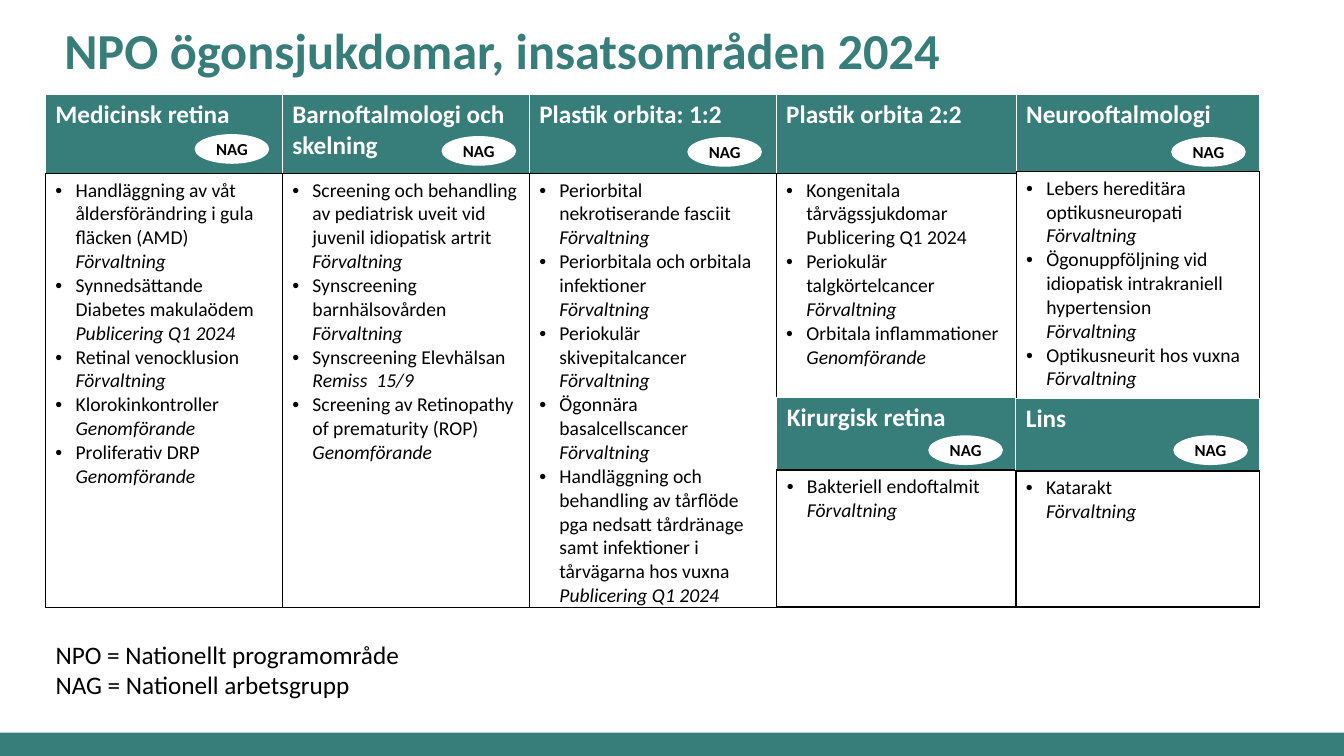
from copy import deepcopy
from dataclasses import dataclass

from lxml import etree
from pptx import Presentation
from pptx.dml.color import RGBColor
from pptx.enum import shapes, text
from pptx.oxml import ns
from pptx.util import Pt

COLORS = {"teal": "377D7A", "white": "FFFFFF", "black": "000000"}
FONT = "Calibri"
BULLET_INDENT = Pt(14.4)


@dataclass
class Item:
    topic: str
    status: str
    italic_status: bool = True


@dataclass
class Area:
    heading: str
    width: float
    items: list[Item]


@dataclass
class AreaTable:
    left: float
    top: float
    header_height: float
    body_height: float
    areas: list[Area]


@dataclass
class Label:
    left: float
    top: float
    width: float
    height: float
    lines: list[str]
    size: float
    color: str = "black"
    bold: bool = False
    wrap: bool = False
    spacing: float | None = None
    anchor: text.MSO_ANCHOR = text.MSO_ANCHOR.TOP


MANAGED, ONGOING, PUBLISHED = "Förvaltning", "Genomförande", "Publicering Q1 2024"

TABLES = [
    AreaTable(32.4, 67.7, 56.2, 309.6, [
        Area("Medicinsk retina", 169.2, [
            Item("Handläggning av våt åldersförändring i gula fläcken (AMD)", MANAGED),
            Item("Synnedsättande Diabetes makulaödem", PUBLISHED),
            Item("Retinal venocklusion", MANAGED),
            Item("Klorokinkontroller", ONGOING),
            Item("Proliferativ DRP", ONGOING)]),
        Area("Barnoftalmologi och skelning", 176.4, [
            Item("Screening och behandling av pediatrisk uveit vid juvenil "
                 "idiopatisk artrit", MANAGED),
            Item("Synscreening barnhälsovården", MANAGED),
            Item("Synscreening Elevhälsan", "Remiss  15/9"),
            Item("Screening av Retinopathy of prematurity (ROP)", ONGOING)]),
        Area("Plastik orbita: 1:2", 176.4, [
            Item("Periorbital nekrotiserande fasciit", MANAGED),
            Item("Periorbitala och orbitala infektioner", MANAGED),
            Item("Periokulär skivepitalcancer", MANAGED),
            Item("Ögonnära basalcellscancer", MANAGED),
            Item("Handläggning och behandling av tårflöde pga nedsatt tårdränage "
                 "samt infektioner i tårvägarna hos vuxna", PUBLISHED)]),
        Area("Plastik orbita 2:2", 171.6, [
            Item("Kongenitala tårvägssjukdomar", PUBLISHED, italic_status=False),
            Item("Periokulär talgkörtelcancer", MANAGED),
            Item("Orbitala inflammationer", ONGOING)]),
    ]),
    AreaTable(725.8, 67.7, 54.8, 162, [
        Area("Neurooftalmologi", 174, [
            Item("Lebers hereditära optikusneuropati", MANAGED),
            Item("Ögonuppföljning vid idiopatisk intrakraniell hypertension", MANAGED),
            Item("Optikusneurit hos vuxna", MANAGED)]),
    ]),
    AreaTable(554.8, 283.7, 52, 97.9, [
        Area("Kirurgisk retina", 170.8, [Item("Bakteriell endoftalmit", MANAGED)]),
    ]),
    AreaTable(725.6, 284.4, 52, 97.2, [
        Area("Lins", 174, [Item("Katarakt", MANAGED)]),
    ]),
]

NAG_SPOTS = [(139, 95.8), (315.4, 97.2), (491, 97.9), (836.6, 97.9),
             (663.1, 311), (838.1, 311)]

LABELS = [
    Label(38.9, 13, 720, 48.2, ["NPO ögonsjukdomar, insatsområden 2024"], 36, "teal",
          bold=True, wrap=True, spacing=0.9, anchor=text.MSO_ANCHOR.BOTTOM),
    Label(32.6, 452.9, 262.8, 51.1,
          ["NPO = Nationellt programområde", "NAG = Nationell arbetsgrupp"], 18),
]


def rgb(name: str) -> RGBColor:
    return RGBColor.from_string(COLORS[name])


def style_runs(paragraph, size: float, color: str, bold: bool) -> None:
    """Format every run, and give line breaks the same properties."""
    for run in paragraph.runs:
        run.font.name, run.font.size, run.font.bold = FONT, Pt(size), bold
        run.font.color.rgb = rgb(color)
    for line_break in paragraph._p.findall(ns.qn("a:br")):
        line_break.append(deepcopy(paragraph.runs[0].font._rPr))


def add_bullet(paragraph) -> None:
    properties = paragraph._p.get_or_add_pPr()
    properties.set("marL", str(BULLET_INDENT))
    properties.set("indent", str(-BULLET_INDENT))
    etree.SubElement(properties, ns.qn("a:buFont")).set("typeface", "Arial")
    etree.SubElement(properties, ns.qn("a:buChar")).set("char", "•")


def set_borders(cell, sides: dict[str, str]) -> None:
    properties = cell._tc.get_or_add_tcPr()
    for side, color in sides.items():
        line = etree.SubElement(properties, ns.qn(f"a:ln{side}"), w=str(Pt(1)))
        fill = etree.SubElement(line, ns.qn("a:solidFill"))
        etree.SubElement(fill, ns.qn("a:srgbClr"), val=COLORS[color])


def fill_header(cell, heading: str) -> None:
    set_borders(cell, {"L": "white", "R": "white", "T": "white", "B": "black"})
    cell.fill.solid()
    cell.fill.fore_color.rgb = rgb("teal")
    cell.text_frame.text = heading
    style_runs(cell.text_frame.paragraphs[0], 18, "white", True)


def fill_body(cell, items: list[Item]) -> None:
    set_borders(cell, dict.fromkeys("LRTB", "black"))
    cell.fill.background()
    cell.margin_bottom = 0
    cell.text_frame.text = "\n".join(f"{item.topic}\v{item.status}" for item in items)
    for paragraph, item in zip(cell.text_frame.paragraphs, items):
        add_bullet(paragraph)
        style_runs(paragraph, 14, "black", False)
        paragraph.runs[-1].font.italic = item.italic_status


def add_area_table(slide, layout: AreaTable) -> None:
    width = sum(area.width for area in layout.areas)
    table = slide.shapes.add_table(
        2, len(layout.areas), Pt(layout.left), Pt(layout.top), Pt(width),
        Pt(layout.header_height + layout.body_height)).table
    table.horz_banding = False
    table.rows[0].height = Pt(layout.header_height)
    table.rows[1].height = Pt(layout.body_height)
    for column, area in enumerate(layout.areas):
        table.columns[column].width = Pt(area.width)
        fill_header(table.cell(0, column), area.heading)
        fill_body(table.cell(1, column), area.items)


def add_plain_shape(slide, kind, left: float, top: float, width: float,
                    height: float, color: str):
    shape = slide.shapes.add_shape(kind, Pt(left), Pt(top), Pt(width), Pt(height))
    shape.shadow.inherit = False
    shape.fill.solid()
    shape.fill.fore_color.rgb = rgb(color)
    shape.line.fill.background()
    return shape


def add_nag(slide, left: float, top: float) -> None:
    badge = add_plain_shape(slide, shapes.MSO_SHAPE.OVAL, left, top, 53.3, 21.2, "white")
    frame = badge.text_frame
    frame.margin_left = frame.margin_right = frame.margin_top = frame.margin_bottom = 0
    frame.vertical_anchor = text.MSO_ANCHOR.MIDDLE
    frame.text = "NAG"
    frame.paragraphs[0].alignment = text.PP_ALIGN.CENTER
    style_runs(frame.paragraphs[0], 12, "black", True)


def add_label(slide, label: Label) -> None:
    frame = slide.shapes.add_textbox(Pt(label.left), Pt(label.top), Pt(label.width),
                                     Pt(label.height)).text_frame
    frame.word_wrap = label.wrap
    frame.vertical_anchor = label.anchor
    frame.text = "\n".join(label.lines)
    for paragraph in frame.paragraphs:
        paragraph.line_spacing = label.spacing
        style_runs(paragraph, label.size, label.color, label.bold)


def main() -> None:
    deck = Presentation()
    deck.slide_width, deck.slide_height = Pt(960), Pt(540)
    slide = deck.slides.add_slide(deck.slide_layouts[6])
    add_plain_shape(slide, shapes.MSO_SHAPE.RECTANGLE, 0, 523.4, 960, 16.6, "teal")
    for table in TABLES:
        add_area_table(slide, table)
    for left, top in NAG_SPOTS:
        add_nag(slide, left, top)
    for label in LABELS:
        add_label(slide, label)
    deck.save("out.pptx")


if __name__ == "__main__":
    main()
